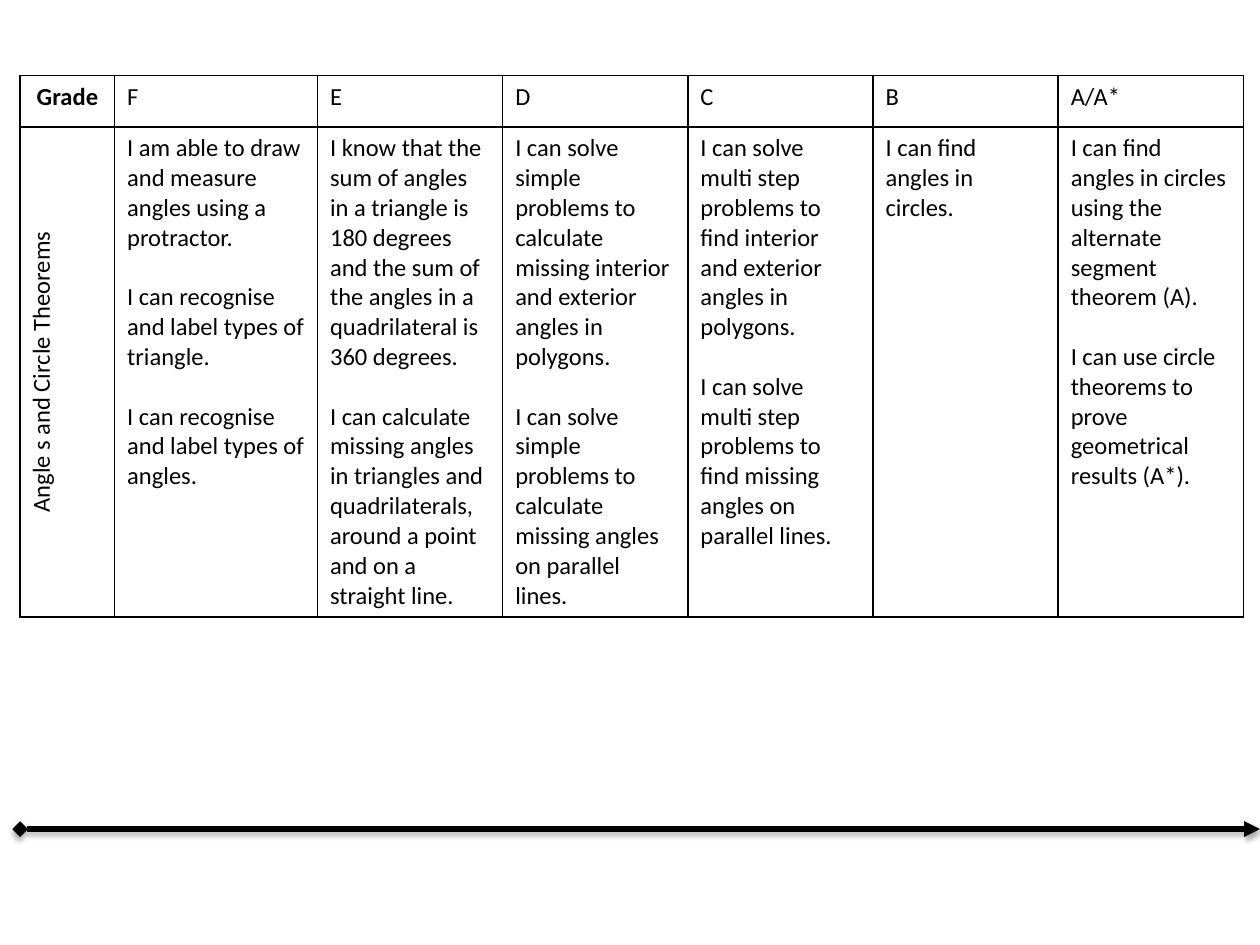
from lxml.etree import SubElement
from pptx import Presentation
from pptx.dml.color import RGBColor
from pptx.enum.shapes import MSO_CONNECTOR
from pptx.enum.text import PP_ALIGN
from pptx.oxml import parse_xml
from pptx.oxml.ns import nsdecls, qn
from pptx.util import Inches, Pt

BLACK = RGBColor(0, 0, 0)
FONT = {"name": "Calibri", "size": Pt(14), "bold": False}

COL_WIDTHS = [0.75, 1.61] + [1.47] * 5
ROW_HEIGHTS = [0.41, 3.83]
GRADES = ["Grade", "F", "E", "D", "C", "B", "A/A*"]
TOPIC = [
    ["Angle s and Circle Theorems"],
    ["I am able to draw and measure angles using a protractor.",
     "I can recognise and label types of triangle.",
     "I can recognise and label types of angles."],
    ["I know that the sum of angles in a triangle is 180 degrees and the sum "
     "of the angles in a quadrilateral is 360 degrees.",
     "I can calculate missing angles in triangles and quadrilaterals, "
     "around a point and on a straight line."],
    ["I can solve simple problems to calculate missing interior and exterior "
     "angles in polygons.",
     "I can solve simple problems to calculate missing angles on parallel lines."],
    ["I can solve multi step problems to find interior and exterior angles "
     "in polygons.",
     "I can solve multi step problems to find missing angles on parallel lines."],
    ["I can find angles in circles."],
    ["I can find angles in circles using the alternate segment theorem (A).",
     "I can use circle theorems to prove geometrical results (A*)."],
]


def fill_cell(cell, paragraphs):
    """Write the paragraphs, one blank line's height apart."""
    tf = cell.text_frame
    for i, text in enumerate(paragraphs):
        p = tf.paragraphs[0] if i == 0 else tf.add_paragraph()
        if i:
            p.space_before = Pt(17)
        r = p.add_run()
        r.text = text
        for name, value in FONT.items():
            setattr(r.font, name, value)
        r.font.color.rgb = BLACK


def add_borders(cell):
    """Draw a thin line on all four sides."""
    tcPr = cell._tc.get_or_add_tcPr()
    for i, side in enumerate(("lnL", "lnR", "lnT", "lnB")):
        tcPr.insert(i, parse_xml(
            f'<a:{side} {nsdecls("a")} w="{Pt(1)}"><a:solidFill>'
            f'<a:srgbClr val="{BLACK}"/></a:solidFill></a:{side}>'))


prs = Presentation()
prs.slide_width, prs.slide_height = Inches(10), Inches(7.5)
s = prs.slides.add_slide(prs.slide_layouts[6])

# Grade table
table = s.shapes.add_table(2, len(GRADES), Inches(0.16), Inches(0.6),
                           Inches(sum(COL_WIDTHS)), Inches(sum(ROW_HEIGHTS))).table
table.first_row = table.horz_banding = False
for col, width in zip(table.columns, COL_WIDTHS):
    col.width = Inches(width)
for row, height in zip(table.rows, ROW_HEIGHTS):
    row.height = Inches(height)
for i, content in enumerate(([[grade] for grade in GRADES], TOPIC)):
    for j, paragraphs in enumerate(content):
        cell = table.cell(i, j)
        fill_cell(cell, paragraphs)
        cell.fill.background()
        add_borders(cell)

# Heading column: bold label, topic turned upwards
for i in range(2):
    table.cell(i, 0).text_frame.paragraphs[0].alignment = PP_ALIGN.CENTER
table.cell(0, 0).text_frame.paragraphs[0].runs[0].font.bold = True
table.cell(1, 0)._tc.get_or_add_tcPr().set("vert", "vert270")

# Progress arrow with a soft shadow
arrow = s.shapes.add_connector(MSO_CONNECTOR.STRAIGHT, Inches(0.16), Inches(6.58),
                               Inches(10), Inches(6.58))
arrow.line.color.rgb = BLACK
arrow.line.width = Pt(3)
ln = arrow.line._get_or_add_ln()
for end, kind in (("a:headEnd", "diamond"), ("a:tailEnd", "triangle")):
    SubElement(ln, qn(end), type=kind)
arrow._element.spPr.append(parse_xml(
    f'<a:effectLst {nsdecls("a")}><a:outerShdw blurRad="{Pt(3.1)}" '
    f'dist="{Pt(1.8)}" dir="5400000" rotWithShape="0"><a:srgbClr val="{BLACK}">'
    '<a:alpha val="35000"/></a:srgbClr></a:outerShdw></a:effectLst>'))

prs.save("out.pptx")
